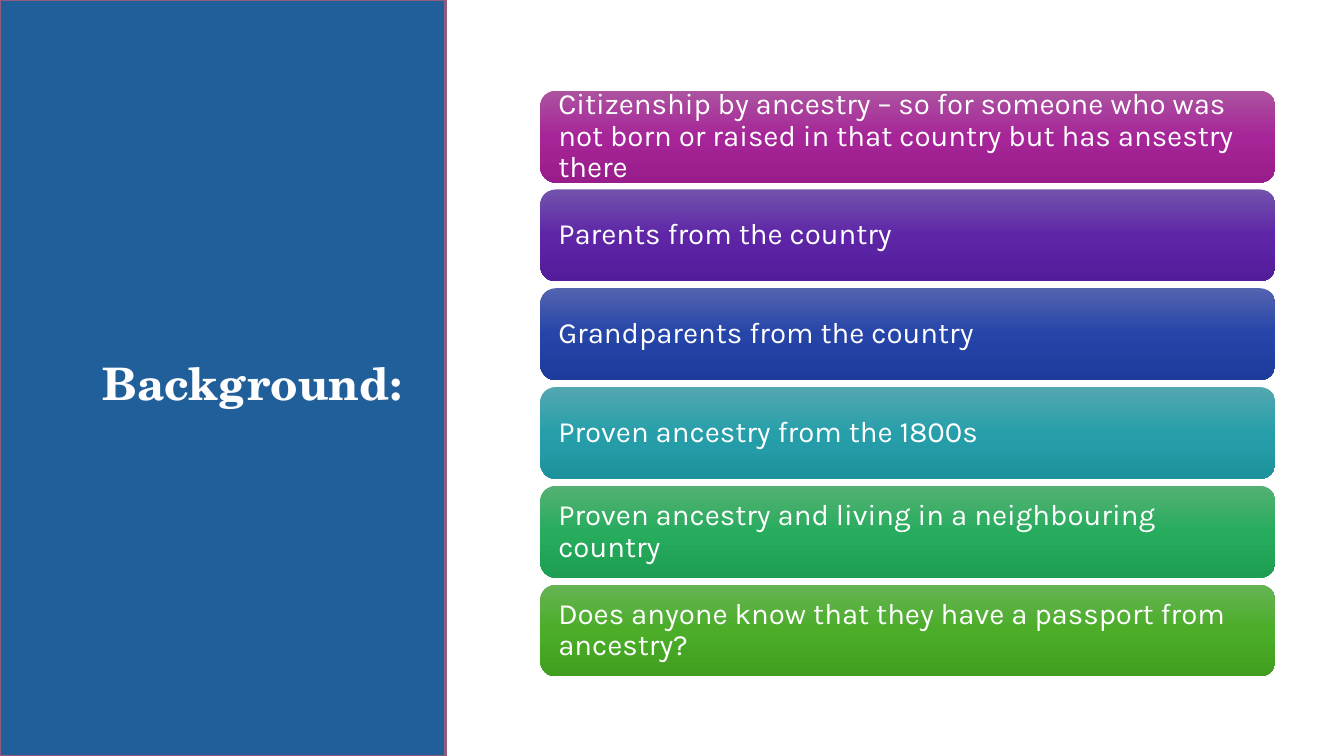
from copy import deepcopy

from pptx import Presentation
from pptx.dml.color import RGBColor
from pptx.enum.shapes import MSO_SHAPE
from pptx.enum.text import MSO_ANCHOR, MSO_AUTO_SIZE, PP_ALIGN
from pptx.oxml.ns import qn
from pptx.util import Pt

RECTANGLE = MSO_SHAPE.RECTANGLE
ROUNDED = MSO_SHAPE.ROUNDED_RECTANGLE
MIDDLE, BOTTOM = MSO_ANCHOR.MIDDLE, MSO_ANCHOR.BOTTOM
LEFT, RIGHT = PP_ALIGN.LEFT, PP_ALIGN.RIGHT
NO_AUTOFIT = MSO_AUTO_SIZE.NONE

SLIDE_WIDTH, SLIDE_HEIGHT = 960, 540
TITLE_ONLY = 5

# Each bar: wording, then its gradient from top to bottom
BARS = [
    ("Citizenship by ancestry – so for someone who was not born or raised "
     "in that country but has ansestry there", ("AC53A0", "A62598", "991C8B")),
    ("Parents from the country", ("7353AD", "5E26A7", "531C9A")),
    ("Grandparents from the country", ("5363AF", "2645A9", "1D3B9B")),
    ("Proven ancestry from the 1800s", ("53A7B0", "279FAA", "1D929D")),
    ("Proven ancestry and living in a neighbouring country",
     ("54B173", "27AC5E", "1E9E52")),
    ("Does anyone know that they have a passport from ancestry?",
     ("66B354", "4BAD28", "409F1E")),
]
BAR_LEFT, BAR_TOP, BAR_WIDTH, BAR_HEIGHT = 386, 64.8, 525, 65.6
BAR_STEP = 70.56


def color(hex_value):
    return RGBColor.from_string(hex_value)


class BackgroundSlide:
    title_font, body_font = "TeX Gyre Schola", "Karla"
    text_color = "FFFFFF"

    def __init__(self, slide):
        self.slide = slide

    def add_text(self, frame, wording, font, size, align, anchor, bold=False):
        frame.word_wrap = True
        frame.auto_size = NO_AUTOFIT
        frame.vertical_anchor = anchor
        paragraph = frame.paragraphs[0]
        paragraph.alignment = align
        paragraph.line_spacing = 0.9
        run = paragraph.add_run()
        run.text = wording
        run.font.name = font
        run.font.size = Pt(size)
        run.font.bold = bold
        run.font.color.rgb = color(self.text_color)

    def shape(self, kind, left, top, width, height):
        shape = self.slide.shapes.add_shape(
            kind, Pt(left), Pt(top), Pt(width), Pt(height))
        shape.shadow.inherit = False
        return shape

    def panel(self, left, top, width, height, fill, line):
        panel = self.shape(RECTANGLE, left, top, width, height)
        panel.fill.solid()
        panel.fill.fore_color.rgb = color(fill)
        panel.line.color.rgb = color(line)
        panel.line.width = Pt(1.5)

    def title(self, wording, left, top, width, height):
        title = self.slide.shapes.title
        title.left, title.top = Pt(left), Pt(top)
        title.width, title.height = Pt(width), Pt(height)
        self.add_text(title.text_frame, wording, self.title_font, 32,
                      RIGHT, BOTTOM, bold=True)
        # Bring the title in front of the panel
        self.slide.shapes.element.append(title.element)

    def bar(self, wording, stops, left, top, width, height):
        bar = self.shape(ROUNDED, left, top, width, height)
        bar.line.fill.background()
        bar.fill.gradient()
        bar.fill.gradient_angle = 270
        stop_list = bar.element.spPr.find(".//" + qn("a:gsLst"))
        stop_list.append(deepcopy(stop_list[0]))
        for index, (stop, shade) in enumerate(
                zip(bar.fill.gradient_stops, stops)):
            stop.position = index / 2
            stop.color.rgb = color(shade)
        frame = bar.text_frame
        frame.margin_left = frame.margin_right = Pt(9.6)
        frame.margin_top = frame.margin_bottom = 0
        self.add_text(frame, wording, self.body_font, 21, LEFT, MIDDLE)


def main():
    deck = Presentation()
    deck.slide_width, deck.slide_height = Pt(SLIDE_WIDTH), Pt(SLIDE_HEIGHT)
    background = BackgroundSlide(
        deck.slides.add_slide(deck.slide_layouts[TITLE_ONLY]))

    # Left panel with the title
    background.panel(0, 0, 318.24, SLIDE_HEIGHT, "215F9A", "915D7F")
    background.title("Background:", 49, 108, 245.5, 188.6)

    # Stack of bars
    for row, (wording, stops) in enumerate(BARS):
        background.bar(wording, stops, BAR_LEFT, BAR_TOP + row * BAR_STEP,
                       BAR_WIDTH, BAR_HEIGHT)

    deck.save("out.pptx")


if __name__ == "__main__":
    main()
